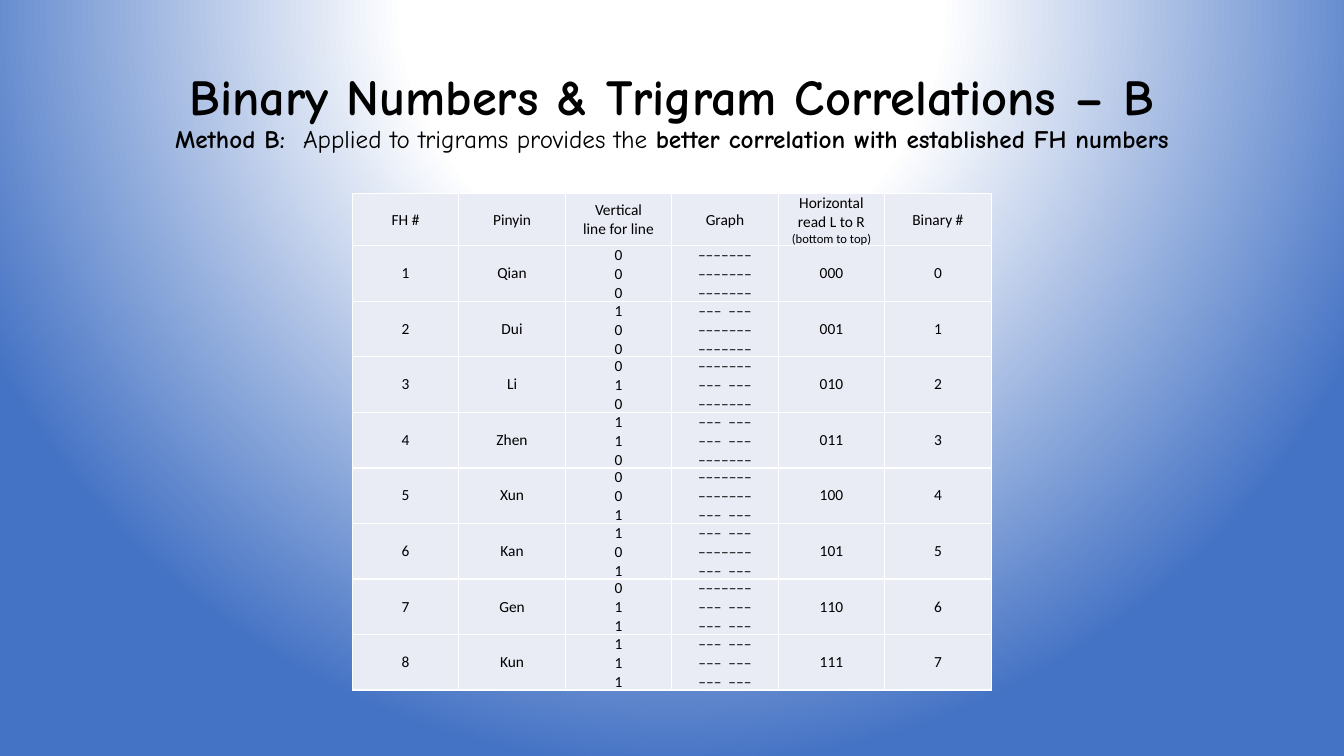
from pptx import Presentation
from pptx.dml.color import RGBColor
from pptx.enum.text import MSO_ANCHOR as Anchor, PP_ALIGN as Align
from pptx.oxml import parse_xml
from pptx.oxml.ns import nsdecls
from pptx.util import Cm, Pt

BLACK, WHITE, BLUE, CELL_FILL = "000000", "FFFFFF", "4472C4", "E9EBF5"
HEADINGS = [
    ["FH #"],
    ["Pinyin"],
    ["Vertical", "line for line"],
    ["Graph"],
    ["Horizontal", "read L to R", "(bottom to top)"],
    ["Binary #"],
]
PINYIN = ["Qian", "Dui", "Li", "Zhen", "Xun", "Kan", "Gen", "Kun"]
STROKES = {"0": "–––––––", "1": "–––  –––"}


def rgb(color):
    return RGBColor.from_string(color)


def paint_background(slide):
    """Radial gradient centred above the slide, white to blue."""
    stops = "".join(
        f'<a:gs pos="{position * 1000}"><a:srgbClr val="{color}"/></a:gs>'
        for position, color in [(0, WHITE), (35, WHITE), (100, BLUE)]
    )
    background = parse_xml(
        f'<p:bg {nsdecls("p", "a")}><p:bgPr><a:gradFill rotWithShape="1">'
        f'<a:gsLst>{stops}</a:gsLst><a:path path="circle">'
        '<a:fillToRect l="50000" t="-80000" r="50000" b="180000"/></a:path>'
        '</a:gradFill><a:effectLst/></p:bgPr></p:bg>'
    )
    slide.element.cSld.insert(0, background)


def add_heading(slide, left, top, width, height):
    frame = slide.shapes.add_textbox(left, top, width, height).text_frame
    frame.word_wrap = True
    frame.vertical_anchor = Anchor.MIDDLE
    heading = frame.paragraphs[0]
    heading.alignment = Align.CENTER
    heading.line_spacing = 0.9
    heading.font.name = "Comic Neue"
    heading.font.color.rgb = rgb(BLACK)

    def add_part(text, size, bold):
        part = heading.add_run()
        part.text = text
        part.font.size = Pt(size)
        part.font.bold = bold

    add_part("Binary Numbers & Trigram Correlations – B", 36, True)
    heading.add_line_break()
    add_part("Method B:  ", 18, True)
    add_part("Applied to trigrams provides the ", 18, False)
    add_part("better correlation with established FH numbers", 18, True)


def fill_cell(cell, lines):
    cell.margin_left = cell.margin_right = Cm(0.18)
    cell.margin_top = cell.margin_bottom = 0
    cell.vertical_anchor = Anchor.MIDDLE
    cell.text = "\n".join(lines)
    for line in cell.text_frame.paragraphs:
        line.alignment = Align.CENTER
        line.font.name = "Calibri"
        line.font.size = Pt(9 if line.text.startswith("(") else 11)
        line.font.color.rgb = rgb(BLACK)
    properties = cell._tc.get_or_add_tcPr()
    for side in "LRTB":
        properties.append(parse_xml(
            f'<a:ln{side} {nsdecls("a")} w="12700"><a:solidFill>'
            f'<a:srgbClr val="{WHITE}"/></a:solidFill></a:ln{side}>'
        ))
    cell.fill.solid()
    cell.fill.fore_color.rgb = rgb(CELL_FILL)


def trigram_row(number, pinyin):
    """Cells of one trigram; its lines are the binary digits from last to first."""
    digits = f"{number:03b}"
    vertical = digits[::-1]
    graph = [STROKES[digit] for digit in vertical]
    return [[str(number + 1)], [pinyin], vertical, graph, [digits], [str(number)]]


def add_trigram_table(slide, left, top, width, header_height, row_height):
    rows = [HEADINGS] + [trigram_row(*entry) for entry in enumerate(PINYIN)]
    height = header_height + row_height * len(PINYIN)
    table = slide.shapes.add_table(
        len(rows), len(HEADINGS), left, top, width, height).table
    table.first_row = table.horz_banding = False
    for index, row in enumerate(rows):
        table.rows[index].height = row_height if index else header_height
        for column, lines in enumerate(row):
            fill_cell(table.cell(index, column), lines)


def main():
    deck = Presentation()
    deck.slide_width, deck.slide_height = Cm(33.87), Cm(19.05)
    slide = deck.slides.add_slide(deck.slide_layouts[6])
    paint_background(slide)
    add_heading(slide, Cm(2.33), Cm(1.01), Cm(29.21), Cm(3.68))
    add_trigram_table(slide, Cm(8.88), Cm(4.88), Cm(16.1), Cm(1.27), Cm(1.35))
    deck.save("out.pptx")


if __name__ == "__main__":
    main()
